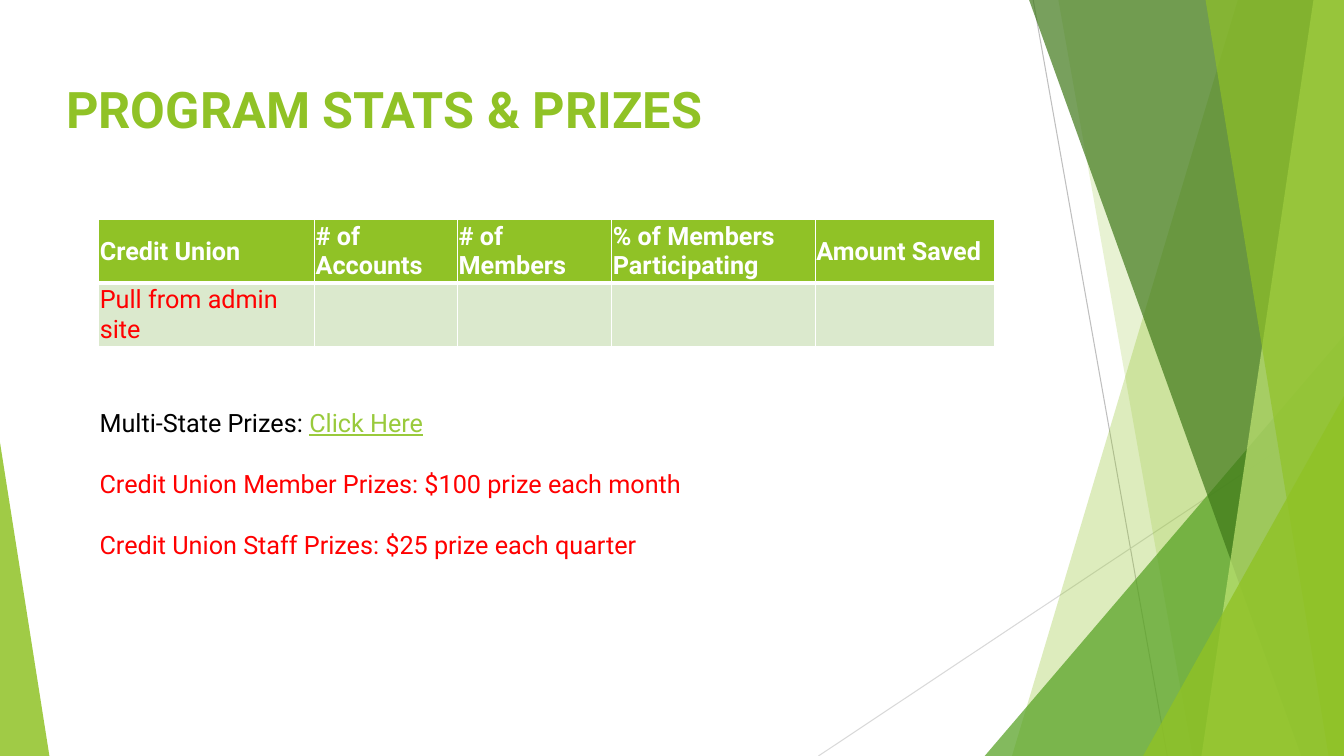
from pptx import Presentation
from pptx.dml.color import RGBColor
from pptx.enum.shapes import MSO_CONNECTOR, MSO_SHAPE
from pptx.enum.text import MSO_ANCHOR
from pptx.oxml.ns import qn
from pptx.util import Pt
from lxml.etree import SubElement

WIDTH, HEIGHT = 960, 540
FONT = "Roboto"
WHITE = RGBColor(0xFF, 0xFF, 0xFF)
BLACK = RGBColor(0x00, 0x00, 0x00)
RED = RGBColor(0xFF, 0x00, 0x00)
GREEN = RGBColor(0x90, 0xC2, 0x26)
MID_GREEN = RGBColor(0x54, 0xA0, 0x21)
DARK_GREEN = RGBColor(0x3F, 0x78, 0x19)
LIGHT_GREEN = RGBColor(0xC0, 0xE4, 0x74)
PALE_GREEN = RGBColor(0xDB, 0xE9, 0xCD)
LINK_GREEN = RGBColor(0x99, 0xCA, 0x3C)
GREY = RGBColor(0xBF, 0xBF, 0xBF)
LIGHT_GREY = RGBColor(0xD9, 0xD9, 0xD9)

COLUMN_WIDTHS = [154.1, 102.2, 110.2, 145.4, 128.2]
ROW_HEIGHT = 45.4
STATS = [
    ["Credit Union", "# of Accounts", "# of Members",
     "% of Members Participating", "Amount Saved"],
    ["Pull from admin site", "", "", "", ""],
]
PRIZES = [
    [("Multi-State Prizes: ", BLACK), ("Click Here", LINK_GREEN)],
    [("Credit Union Member Prizes: $100 prize each month", RED)],
    [("Credit Union Staff Prizes: $25 prize each quarter", RED)],
]


def style_run(run, size, color, bold=False):
    run.font.name = FONT
    run.font.size = Pt(size)
    run.font.bold = bold
    run.font.color.rgb = color


def paint(shape, color, opacity):
    """Fill a shape with a see-through colour and no outline."""
    shape.shadow.inherit = False
    shape.line.fill.background()
    shape.fill.solid()
    shape.fill.fore_color.rgb = color
    srgb = shape.fill._xPr.find(qn("a:solidFill"))[0]
    SubElement(srgb, qn("a:alpha"), val=str(opacity * 1000))


def add_thin_line(slide, start, end, color):
    line = slide.shapes.add_connector(
        MSO_CONNECTOR.STRAIGHT, *(Pt(v) for v in start + end))
    line.line.color.rgb = color
    line.line.width = Pt(0.75)
    SubElement(line._element.spPr, qn("a:effectLst"))


def add_band(slide, top_x, bottom_x, color, opacity):
    """Full-height band from a slanted left edge to the slide's right edge."""
    builder = slide.shapes.build_freeform(Pt(top_x), 0)
    corners = [(WIDTH, 0), (WIDTH, HEIGHT), (bottom_x, HEIGHT)]
    builder.add_line_segments([(Pt(x), Pt(y)) for x, y in corners], close=True)
    paint(builder.convert_to_shape(), color, opacity)


def add_corner(slide, left, top, width, apex, color, opacity):
    """Triangle standing on the slide's bottom edge."""
    corner = slide.shapes.add_shape(
        MSO_SHAPE.ISOSCELES_TRIANGLE, Pt(left), Pt(top), Pt(width), Pt(HEIGHT - top))
    corner.adjustments[0] = apex
    paint(corner, color, opacity)


def add_text_frame(slide, left, top, width, height):
    box = slide.shapes.add_textbox(Pt(left), Pt(top), Pt(width), Pt(height))
    box.text_frame.word_wrap = True
    return box.text_frame


def add_borders(cell, widths):
    properties = cell._tc.get_or_add_tcPr()
    for side, width in widths.items():
        border = SubElement(properties, qn(f"a:ln{side}"), w=str(Pt(width)))
        fill = SubElement(border, qn("a:solidFill"))
        SubElement(fill, qn("a:srgbClr"), val=str(WHITE))


def fill_cell(cell, text, is_header):
    add_borders(cell, {"L": 1, "R": 1, "T": 1 if is_header else 3,
                       "B": 3 if is_header else 1})
    cell.fill.solid()
    cell.fill.fore_color.rgb = GREEN if is_header else PALE_GREEN
    cell.vertical_anchor = MSO_ANCHOR.MIDDLE
    cell.margin_left = cell.margin_right = Pt(0.72)
    cell.margin_top = cell.margin_bottom = Pt(0.72)
    cell.text_frame.text = text
    for run in cell.text_frame.paragraphs[0].runs:
        style_run(run, 18, WHITE if is_header else RED, bold=is_header)


def add_stats_table(slide, left, top):
    stats = slide.shapes.add_table(
        len(STATS), len(COLUMN_WIDTHS), Pt(left), Pt(top),
        Pt(sum(COLUMN_WIDTHS)), Pt(ROW_HEIGHT * len(STATS))).table
    for column, width in zip(stats.columns, COLUMN_WIDTHS):
        column.width = Pt(width)
    for row_index, texts in enumerate(STATS):
        stats.rows[row_index].height = Pt(ROW_HEIGHT)
        for column_index, text in enumerate(texts):
            fill_cell(stats.cell(row_index, column_index), text, row_index == 0)


def add_title(slide):
    title = add_text_frame(slide, 40.3, 52.6, 676.8, 103.7)
    title.text = "PROGRAM STATS & PRIZES"
    style_run(title.paragraphs[0].runs[0], 36, GREEN, bold=True)


def add_prizes(slide):
    prizes = add_text_frame(slide, 64.1, 287.3, 671.8, 138.2)
    for index, parts in enumerate(PRIZES):
        prize = prizes.paragraphs[0] if index == 0 else prizes.add_paragraph()
        prize.space_before = Pt(22 if index else 0)
        for text, color in parts:
            run = prize.add_run()
            run.text = text
            style_run(run, 18, color)
            run.font.underline = color == LINK_GREEN


def add_backdrop(slide):
    add_thin_line(slide, (738, 0), (833.8, HEIGHT), GREY)
    add_thin_line(slide, (WIDTH, 290.2), (584.6, HEIGHT), LIGHT_GREY)
    add_band(slide, 884.2, 722.9, GREEN, 30)
    add_band(slide, 756, 851.8, GREEN, 20)
    add_corner(slide, 703.4, 239.8, 256.6, 1, MID_GREEN, 72)
    add_band(slide, 735.1, 929.5, DARK_GREEN, 70)
    add_band(slide, 938.2, 858.2, LIGHT_GREEN, 70)
    add_band(slide, 861.1, 949, GREEN, 65)
    add_corner(slide, 816.5, 283, 143.5, 1, GREEN, 80)
    add_corner(slide, 0, 316.1, 35.3, 0, GREEN, 85)


def main():
    deck = Presentation()
    deck.slide_width, deck.slide_height = Pt(WIDTH), Pt(HEIGHT)
    slide = deck.slides.add_slide(deck.slide_layouts[6])

    # Green facets behind the content
    add_backdrop(slide)

    # Heading, prize list and statistics
    add_title(slide)
    add_prizes(slide)
    add_stats_table(slide, 70.6, 157)

    deck.save("out.pptx")


if __name__ == "__main__":
    main()
